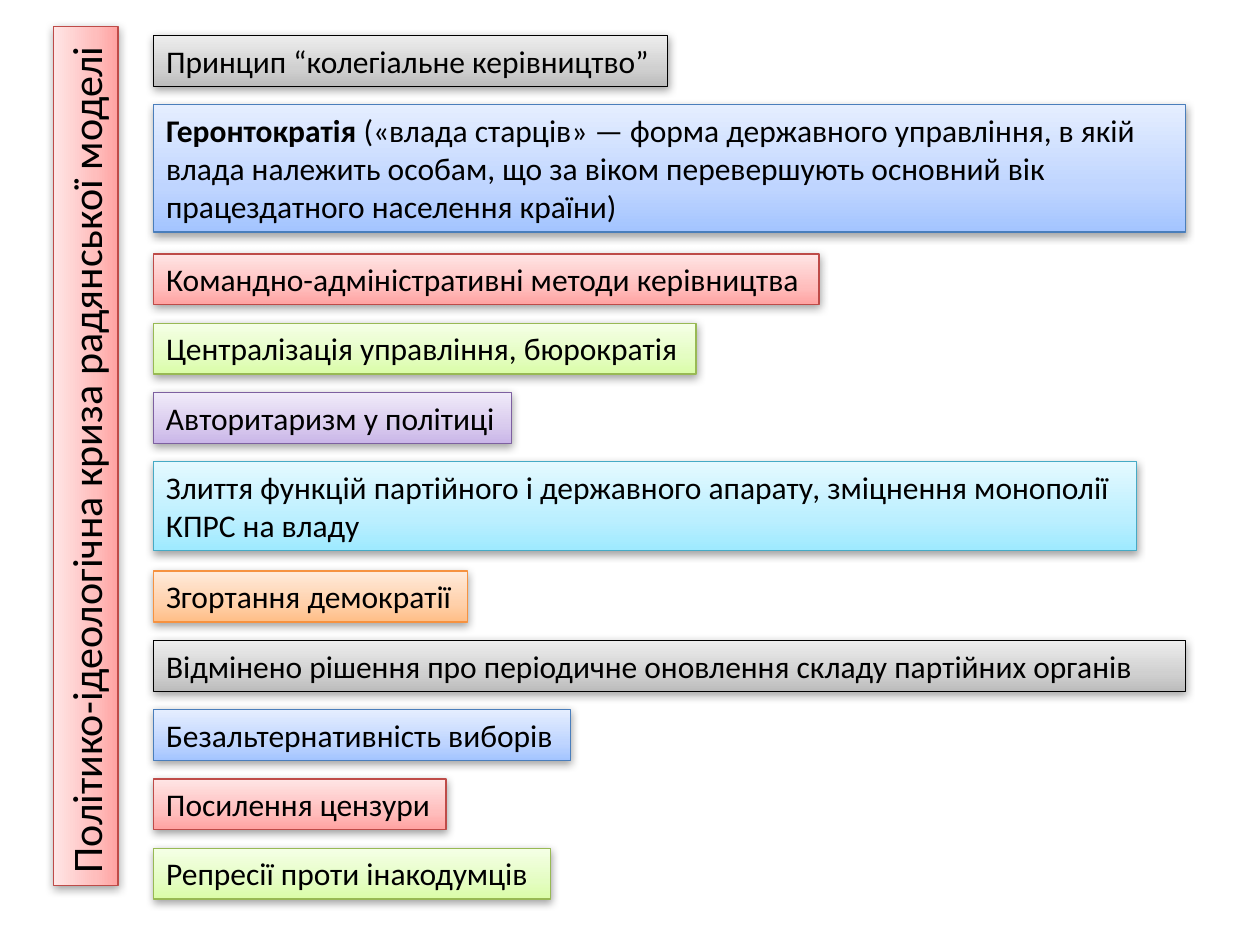
"""Builds a slide on the political and ideological crisis of the Soviet model."""
import copy

import lxml.etree
import pptx
import pptx.dml.color
import pptx.enum.shapes
import pptx.enum.text
import pptx.oxml
import pptx.oxml.ns
import pptx.util

Pt = pptx.util.Pt
RGB = pptx.dml.color.RGBColor.from_string

BLACK = RGB("000000")
GREY = (BLACK, RGB("BCBCBC"), RGB("D0D0D0"), RGB("EDEDED"))
BLUE = (RGB("4A7EBB"), RGB("A3C4FF"), RGB("BFD5FF"), RGB("E5EEFF"))
RED = (RGB("BE4B48"), RGB("FFA2A1"), RGB("FFBEBD"), RGB("FFE5E5"))
GREEN = (RGB("98B954"), RGB("DAFDA7"), RGB("E4FDC2"), RGB("F5FFE6"))
VIOLET = (RGB("7D60A0"), RGB("C9B5E8"), RGB("D9CBEE"), RGB("F0EAF9"))
AQUA = (RGB("46AAC5"), RGB("9EEAFF"), RGB("BBEFFF"), RGB("E4F9FF"))
ORANGE = (RGB("F69240"), RGB("FFBE86"), RGB("FFD0AA"), RGB("FFEBDB"))

TITLE = "Політико-ідеологічна криза радянської моделі"
TERM = "Геронтократія"
ITEMS = [
    (GREY, 293.8, 1, "", "Принцип “колегіальне керівництво”"),
    (BLUE, 589.7, 3, TERM, " («влада старців» — форма державного управління, в якій "
     "влада належить особам, що за віком перевершують основний вік "
     "працездатного населення країни)"),
    (RED, 380.2, 1, "", "Командно-адміністративні методи керівництва"),
    (GREEN, 309.9, 1, "", "Централізація управління, бюрократія"),
    (VIOLET, 204.5, 1, "", "Авторитаризм у політиці"),
    (AQUA, 561.6, 2, "", "Злиття функцій партійного і державного апарату, "
     "зміцнення монополії КПРС на владу"),
    (ORANGE, 179.3, 1, "", "Згортання демократії"),
    (GREY, 589.7, 1, "", "Відмінено рішення про періодичне оновлення складу "
     "партійних органів"),
    (BLUE, 238.3, 1, "", "Безальтернативність виборів"),
    (RED, 167.2, 1, "", "Посилення цензури"),
    (GREEN, 226.8, 1, "", "Репресії проти інакодумців"),
]
LEFT, TOP = 87.8, 20.3
HIGH, LINE = 29.1, 21.8
STEP, MORE = 39.6, 22.8

SHADOW = (
    '<a:outerShdw xmlns:a="http://schemas.openxmlformats.org/drawingml/2006/main" '
    'blurRad="63500" dist="20000" dir="5400000" rotWithShape="0">'
    '<a:srgbClr val="000000"><a:alpha val="37000"/></a:srgbClr></a:outerShdw>'
)


def shade(box, tones):
    """Fill a box with a three-stop gradient that runs upwards."""
    box.fill.gradient()
    box.fill.gradient_angle = 90
    stops = box._element.spPr.find(".//" + pptx.oxml.ns.qn("a:gsLst"))
    stops.insert(1, copy.deepcopy(stops[0]))
    for stop, place, tone in zip(box.fill.gradient_stops, (0, 0.35, 1), tones):
        stop.position = place
        stop.color.rgb = tone


def cast(box):
    """Give a box a soft shadow below it."""
    box.shadow.inherit = False
    effects = box._element.spPr.find(pptx.oxml.ns.qn("a:effectLst"))
    effects.append(lxml.etree.fromstring(SHADOW))


def write(box, term, text, size):
    """Write a bold term, if any, and the text after it."""
    frame = box.text_frame
    frame.word_wrap = True
    frame.vertical_anchor = pptx.enum.text.MSO_ANCHOR.TOP
    par = frame.paragraphs[0]
    par.alignment = pptx.enum.text.PP_ALIGN.LEFT
    par.text = term or text
    if term:
        par.runs[0].font.bold = True
        par.add_run().text = text
    for run in par.runs:
        run.font.name = "Calibri"
        run.font.size = Pt(size)
        run.font.color.rgb = BLACK


def panel(slide, place, theme, text, size=18, term=""):
    """Add a shaded box with text and return it."""
    kind = pptx.enum.shapes.MSO_SHAPE.RECTANGLE
    box = slide.shapes.add_shape(kind, *map(Pt, place))
    edge, *tones = theme
    shade(box, tones)
    box.line.color.rgb = edge
    box.line.width = Pt(0.75)
    cast(box)
    write(box, term, text, size)
    return box


def main():
    """Build the slide and save it."""
    deck = pptx.Presentation()
    deck.slide_width, deck.slide_height = Pt(720), Pt(540)
    slide = deck.slides.add_slide(deck.slide_layouts[6])
    title = panel(slide, (-196.4, 242.3, 491, 36.7), RED, TITLE, 24)
    title.rotation = 270
    top = TOP
    for theme, width, lines, term, text in ITEMS:
        extra = lines - 1
        place = (LEFT, top, width, HIGH + extra * LINE)
        panel(slide, place, theme, text, term=term)
        top += STEP + extra * MORE
    deck.save("out.pptx")


if __name__ == "__main__":
    main()
